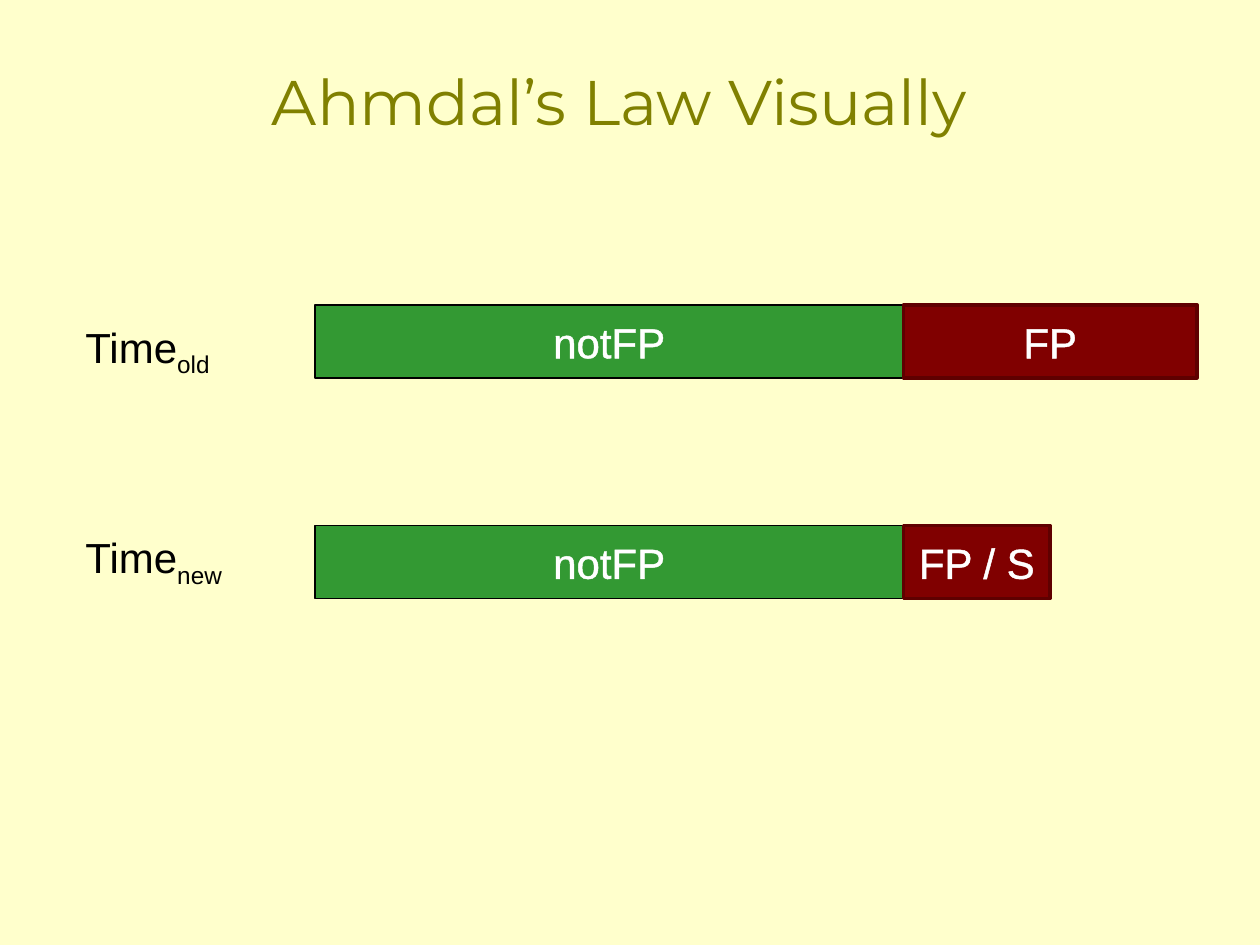
"""Build a slide showing the old and new running times as split bars."""
from dataclasses import dataclass

from lxml import etree
from pptx import Presentation
from pptx.dml.color import RGBColor
from pptx.enum import shapes, text
from pptx.oxml import ns
from pptx.util import Inches, Pt


@dataclass(frozen=True)
class Theme:
    background: str = "FFFFCC"
    title: str = "808000"
    label: str = "000000"
    bar_text: str = "FFFFFF"
    title_font: str = "Montserrat"
    body_font: str = "Arial"
    title_size: float = 36
    body_size: float = 24
    text_outline: float = 1.45


@dataclass(frozen=True)
class Style:
    fill: str
    line: str
    weight: float


@dataclass(frozen=True)
class Segment:
    caption: str
    width: float
    style: Style


@dataclass(frozen=True)
class TimeRow:
    subscript: str
    label_top: float
    label_width: float
    bar_top: float
    segments: tuple[Segment, ...]


THEME = Theme()
UNCHANGED = Style("339933", "000000", 0.75)
IMPROVED = Style("800000", "5F0000", 2)
LABEL_LEFT, LABEL_HEIGHT = 0.58, 0.5
BAR_LEFT, BAR_HEIGHT = 2.5, 0.58
FP_WIDTH, SPEEDUP = 2.33, 2

NOT_FP = Segment("notFP", 4.67, UNCHANGED)
ROWS = (
    TimeRow("old", 2.5, 1.24, 2.42, (NOT_FP, Segment("FP", FP_WIDTH, IMPROVED))),
    TimeRow("new", 4.17, 1.35, 4.17, (NOT_FP, Segment("FP / S", FP_WIDTH / SPEEDUP, IMPROVED))),
)


def add_span(para, words: str, font: str, size: float, color: str):
    """Append one formatted run and return it."""
    span = para.add_run()
    span.text = words
    span.font.name = font
    span.font.size = Pt(size)
    span.font.color.rgb = RGBColor.from_string(color)
    return span


def outline_text(span, color: str, weight: float) -> None:
    """Draw a solid outline around the letters of a run."""
    line = etree.Element(ns.qn("a:ln"), w=str(Pt(weight)))
    fill = etree.SubElement(line, ns.qn("a:solidFill"))
    etree.SubElement(fill, ns.qn("a:srgbClr"), val=color)
    span.font._element.insert(0, line)


def add_title(page, words: str) -> None:
    """Place and fill the title placeholder."""
    box = page.shapes.title
    box.left, box.top = Inches(0.58), Inches(0.17)
    box.width, box.height = Inches(8.67), Inches(1.25)
    box.text_frame.vertical_anchor = text.MSO_ANCHOR.MIDDLE
    para = box.text_frame.paragraphs[0]
    para.alignment = text.PP_ALIGN.CENTER
    add_span(para, words, THEME.title_font, THEME.title_size, THEME.title)


def add_segment(page, segment: Segment, left: float, top: float) -> None:
    """Draw one captioned part of a bar."""
    box = page.shapes.add_shape(
        shapes.MSO_SHAPE.RECTANGLE,
        Inches(left), Inches(top), Inches(segment.width), Inches(BAR_HEIGHT),
    )
    box.shadow.inherit = False
    box.fill.solid()
    box.fill.fore_color.rgb = RGBColor.from_string(segment.style.fill)
    box.line.color.rgb = RGBColor.from_string(segment.style.line)
    box.line.width = Pt(segment.style.weight)
    box.text_frame.vertical_anchor = text.MSO_ANCHOR.MIDDLE
    para = box.text_frame.paragraphs[0]
    para.alignment = text.PP_ALIGN.CENTER
    span = add_span(para, segment.caption, THEME.body_font, THEME.body_size, THEME.bar_text)
    outline_text(span, THEME.bar_text, THEME.text_outline)


def add_label(page, row: TimeRow) -> None:
    """Write the row's time symbol with its subscript."""
    box = page.shapes.add_textbox(
        Inches(LABEL_LEFT), Inches(row.label_top), Inches(row.label_width), Inches(LABEL_HEIGHT)
    )
    box.text_frame.word_wrap = False
    box.text_frame.auto_size = text.MSO_AUTO_SIZE.SHAPE_TO_FIT_TEXT
    para = box.text_frame.paragraphs[0]
    add_span(para, "Time", THEME.body_font, THEME.body_size, THEME.label)
    span = add_span(para, row.subscript, THEME.body_font, THEME.body_size, THEME.label)
    span.font._element.set("baseline", "-25000")


def add_row(page, row: TimeRow) -> None:
    """Draw a label and its segments end to end."""
    add_label(page, row)
    left = BAR_LEFT
    for segment in row.segments:
        add_segment(page, segment, left, row.bar_top)
        left += segment.width


def main() -> None:
    """Build and save the deck."""
    deck = Presentation()
    deck.slide_width, deck.slide_height = Inches(10), Inches(7.5)
    page = deck.slides.add_slide(deck.slide_layouts.get_by_name("Title Only"))
    page.background.fill.solid()
    page.background.fill.fore_color.rgb = RGBColor.from_string(THEME.background)
    add_title(page, "Ahmdal’s Law Visually")
    for row in ROWS:
        add_row(page, row)
    deck.save("out.pptx")


if __name__ == "__main__":
    main()
